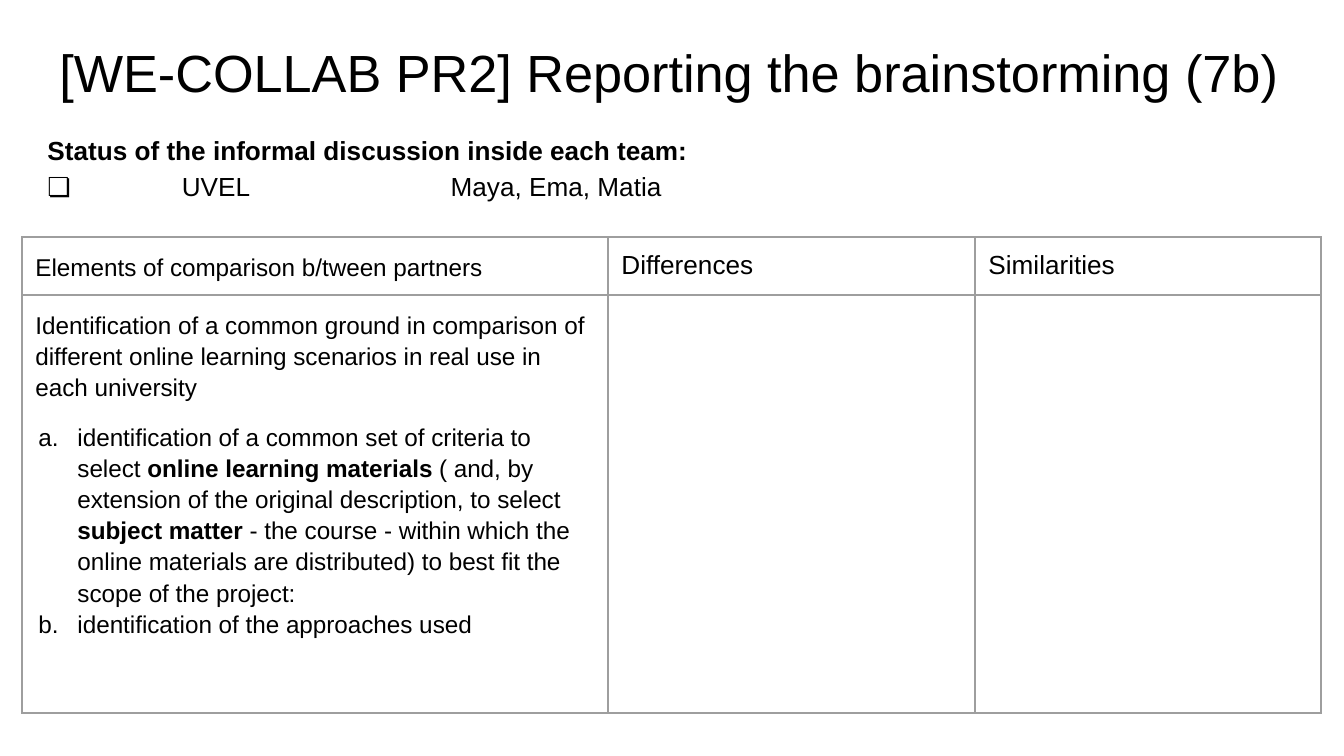
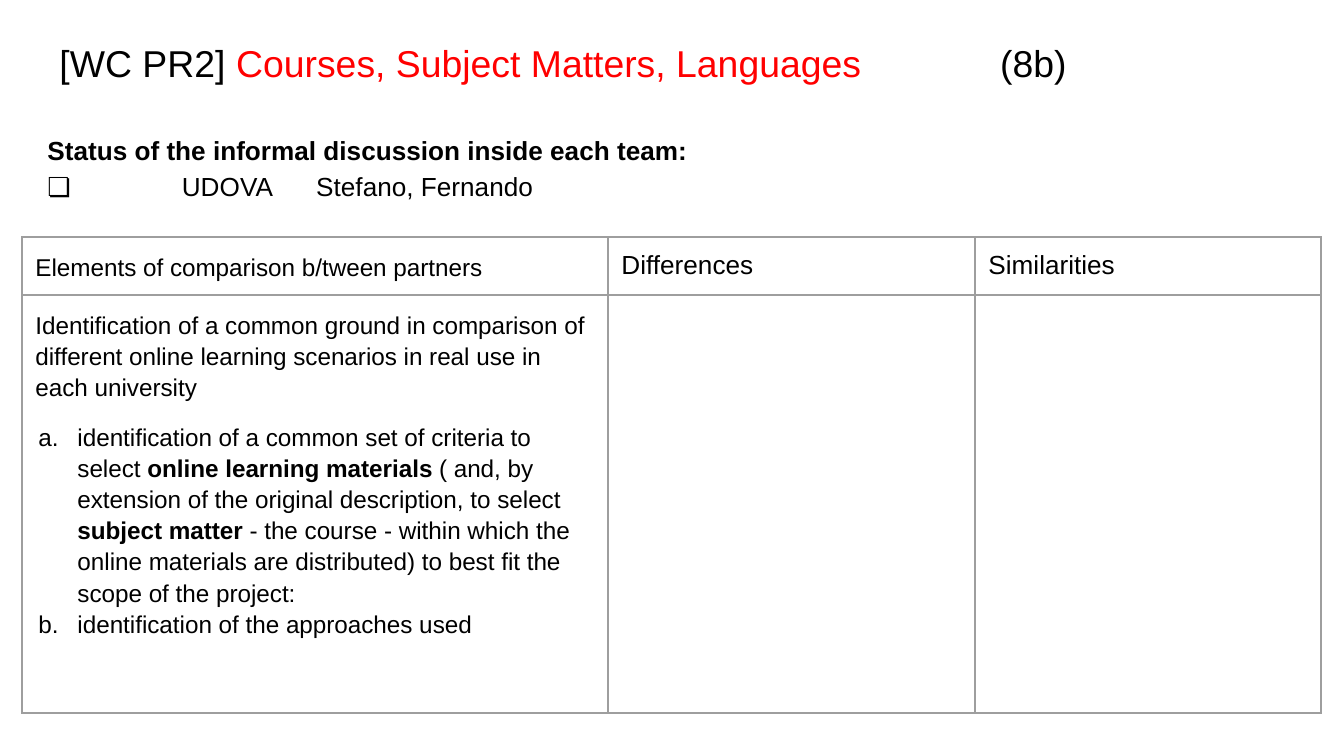
from lxml import etree
from pptx import Presentation
from pptx.dml.color import RGBColor
from pptx.enum.text import MSO_ANCHOR, MSO_AUTO_SIZE, PP_ALIGN
from pptx.oxml.ns import qn
from pptx.util import Pt

TOP = MSO_ANCHOR.TOP
NO_AUTOFIT = MSO_AUTO_SIZE.NONE
LEFT = PP_ALIGN.LEFT

PX = 6804  # EMU per px
INCH = 914400
INSET = INCH // 10
FONT = "Arial"
BLACK, RED, WHITE, GREY = "000000", "FF0000", "FFFFFF", "9E9E9E"
LINE_SPACING = 1.15

STATUS = "Status of the informal discussion inside each team:"
HEADINGS = [  # text, size, line spacing, space before
    ("Elements of comparison b/tween partners", 13, LINE_SPACING, 10),
    ("Differences", 14, 1, 0),
    ("Similarities", 14, 1, 0),
]
COMMON_GROUND = (
    "Identification of a common ground in comparison of different online "
    "learning scenarios in real use in each university"
)
# Text between asterisks is bold
CRITERIA = [
    "identification of a common set of criteria to select *online learning "
    "materials* ( and, by extension of the original description, to select "
    "*subject matter* - the course - within which the online materials are "
    "distributed) to best fit the scope of the project:",
    "identification of the approaches used",
]
COLUMN_WIDTHS = [586, 367, 346]
ROW_HEIGHTS = [58, 418]

SLIDES = [
    {
        "title": [("[WE-COLLAB PR2] Reporting the brainstorming (7b)", BLACK)],
        "title_size": 28,
        "team": "❏\tUVEL \t\tMaya, Ema, Matia",
        "body_height": 90,
    },
    {
        "title": [
            ("[WC PR2] ", BLACK),
            ("Courses, Subject Matters, Languages \t", RED),
            ("(8b)", BLACK),
        ],
        "title_size": 20,
        "team": "❏\tUDOVA\tStefano, Fernando",
        "body_height": 379,
    },
]


def rgb(color):
    return RGBColor.from_string(color)


def write(paragraph, text, size, bold=False, color=BLACK, line=1, before=0):
    paragraph.alignment = LEFT
    paragraph.line_spacing = line
    paragraph.space_before = Pt(before)
    paragraph.space_after = Pt(0)
    run = paragraph.add_run()
    run.text = text
    run.font.name = FONT
    run.font.size = Pt(size)
    run.font.bold = bold
    run.font.color.rgb = rgb(color)


presentation = Presentation()
presentation.slide_width = 1344 * PX
presentation.slide_height = 756 * PX

for content in SLIDES:
    slide = presentation.slides.add_slide(presentation.slide_layouts[1])
    slide.background.fill.solid()
    slide.background.fill.fore_color.rgb = rgb(WHITE)
    title, body = slide.placeholders

    # Place the title and the status list
    for shape, box in [
        (title, (46, 27, 1253, 140)),
        (body, (34, 116, 1253, content["body_height"])),
    ]:
        shape.left, shape.top, shape.width, shape.height = [n * PX for n in box]
        frame = shape.text_frame
        frame.word_wrap = True
        frame.auto_size = NO_AUTOFIT
        frame.vertical_anchor = TOP
        frame.margin_left = frame.margin_right = INSET
        frame.margin_top = frame.margin_bottom = INSET

    # Title and status text
    for text, color in content["title"]:
        write(title.text_frame.paragraphs[0], text, content["title_size"], color=color)
    write(body.text_frame.paragraphs[0], STATUS, 14, bold=True, line=LINE_SPACING)
    write(body.text_frame.add_paragraph(), content["team"], 14, line=LINE_SPACING)

    # No bullets, and a tab stop at every inch
    for paragraph in [*title.text_frame.paragraphs, *body.text_frame.paragraphs]:
        properties = paragraph._p.get_or_add_pPr()
        properties.set("marL", "0")
        properties.set("indent", "0")
        properties.set("defTabSz", str(INCH))
        etree.SubElement(properties, qn("a:buNone"))

    # Comparison table
    table = slide.shapes.add_table(
        len(ROW_HEIGHTS), len(COLUMN_WIDTHS), 22 * PX, 237 * PX,
        sum(COLUMN_WIDTHS) * PX, sum(ROW_HEIGHTS) * PX,
    ).table
    table.first_row = False
    table.horz_banding = False
    for column, width in zip(table.columns, COLUMN_WIDTHS):
        column.width = width * PX
    for row, height in zip(table.rows, ROW_HEIGHTS):
        row.height = height * PX

    # Cell margins, borders and fill
    for cell in table.iter_cells():
        cell.margin_left = cell.margin_right = INSET
        cell.margin_top = cell.margin_bottom = INSET
        cell.vertical_anchor = TOP
        cell_properties = cell._tc.get_or_add_tcPr()
        for side in ("a:lnL", "a:lnR", "a:lnT", "a:lnB"):
            border = etree.SubElement(cell_properties, qn(side), w=str(Pt(0.75)))
            fill = etree.SubElement(border, qn("a:solidFill"))
            etree.SubElement(fill, qn("a:srgbClr"), val=GREY)
        cell.fill.background()

    # Header row
    for column, (text, size, line, before) in enumerate(HEADINGS):
        paragraph = table.cell(0, column).text_frame.paragraphs[0]
        write(paragraph, text, size, line=line, before=before)

    # Elements of comparison, with a lettered list
    frame = table.cell(1, 0).text_frame
    write(frame.paragraphs[0], COMMON_GROUND, 13, line=LINE_SPACING, before=10)
    for index, criterion in enumerate(CRITERIA):
        paragraph = frame.add_paragraph()
        for part, text in enumerate(criterion.split("*")):
            write(paragraph, text, 13, bold=part % 2 == 1, line=LINE_SPACING,
                  before=10 if index == 0 else 0)
        properties = paragraph._p.get_or_add_pPr()
        properties.set("marL", str(42 * PX))
        properties.set("indent", str(-39 * PX))
        bullet_color = etree.SubElement(properties, qn("a:buClr"))
        etree.SubElement(bullet_color, qn("a:srgbClr"), val=BLACK)
        etree.SubElement(properties, qn("a:buFont"), typeface=FONT)
        etree.SubElement(properties, qn("a:buAutoNum"), type="alphaLcPeriod")

presentation.save("out.pptx")
